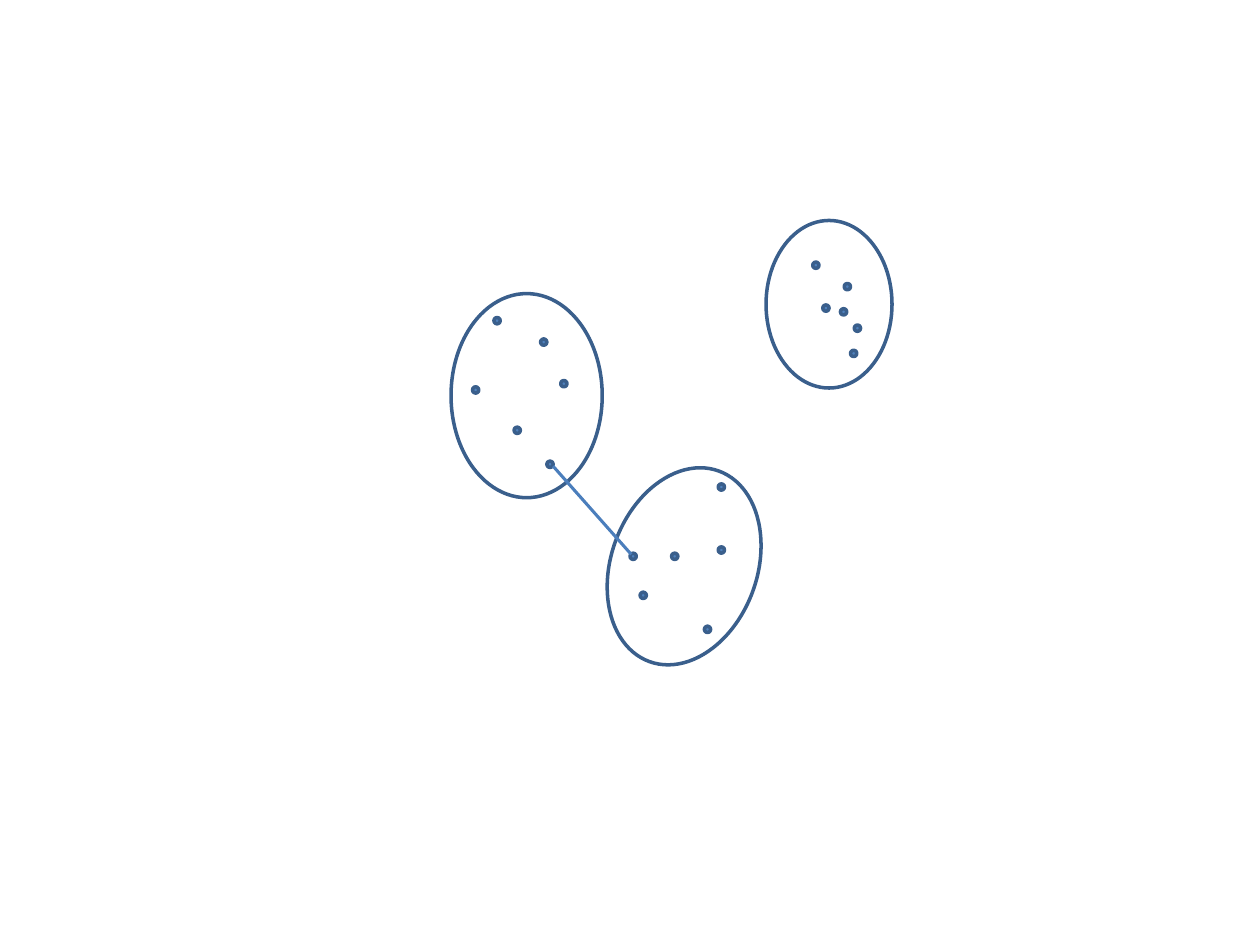
from dataclasses import dataclass

from lxml.etree import SubElement
from pptx import Presentation
from pptx.dml.color import RGBColor
from pptx.enum.shapes import MSO_CONNECTOR, MSO_SHAPE
from pptx.oxml.ns import qn
from pptx.shapes.autoshape import Shape
from pptx.slide import Slide
from pptx.util import Inches, Pt

DOT_FILL = RGBColor(0x4F, 0x81, 0xBD)
OUTLINE = RGBColor(0x3A, 0x5F, 0x8C)
LINK = RGBColor(0x4B, 0x7E, 0xBC)
DOT_SIZE = 0.05


@dataclass(frozen=True)
class Cluster:
    left: float
    top: float
    width: float
    height: float
    rotation: float
    dots: tuple[tuple[float, float], ...]  # top-left corners


CLUSTERS = (
    Cluster(3.58, 2.33, 1.2, 1.62, 0,
            ((3.92, 2.52), (3.75, 3.07), (4.08, 3.39),
             (4.34, 3.66), (4.29, 2.69), (4.45, 3.02))),
    Cluster(6.08, 1.75, 1, 1.33, 0,
            ((6.7, 2.25), (6.78, 2.58), (6.45, 2.08),
             (6.53, 2.42), (6.67, 2.45), (6.75, 2.78))),
    Cluster(4.85, 3.69, 1.16, 1.61, 20,
            ((5.7, 3.84), (5, 4.39), (5.08, 4.7),
             (5.59, 4.97), (5.33, 4.39), (5.7, 4.34))),
)


def add_ellipse(s: Slide, left: float, top: float,
                width: float, height: float) -> Shape:
    sp = s.shapes.add_shape(MSO_SHAPE.OVAL, Inches(left), Inches(top),
                            Inches(width), Inches(height))
    sp.shadow.inherit = False
    sp.fill.background()
    sp.line.color.rgb = OUTLINE
    sp.line.width = Pt(2)
    return sp


def add_cluster(s: Slide, cluster: Cluster) -> None:
    for left, top in cluster.dots:
        dot = add_ellipse(s, left, top, DOT_SIZE, DOT_SIZE)
        dot.fill.solid()
        dot.fill.fore_color.rgb = DOT_FILL
    ring = add_ellipse(s, cluster.left, cluster.top,
                       cluster.width, cluster.height)
    ring.rotation = cluster.rotation


def add_link(s: Slide, start: tuple[float, float],
             end: tuple[float, float]) -> None:
    link = s.shapes.add_connector(MSO_CONNECTOR.STRAIGHT,
                                  *map(Inches, start + end))
    link.line.color.rgb = LINK
    link.line.width = Pt(1.75)
    SubElement(link._element.spPr, qn("a:effectLst"))


def main() -> None:
    prs = Presentation()
    prs.slide_width, prs.slide_height = Inches(10), Inches(7.5)
    s = prs.slides.add_slide(prs.slide_layouts[6])
    for cluster in CLUSTERS:
        add_cluster(s, cluster)
    add_link(s, (5.01, 4.4), (4.39, 3.7))
    prs.save("out.pptx")


if __name__ == "__main__":
    main()
